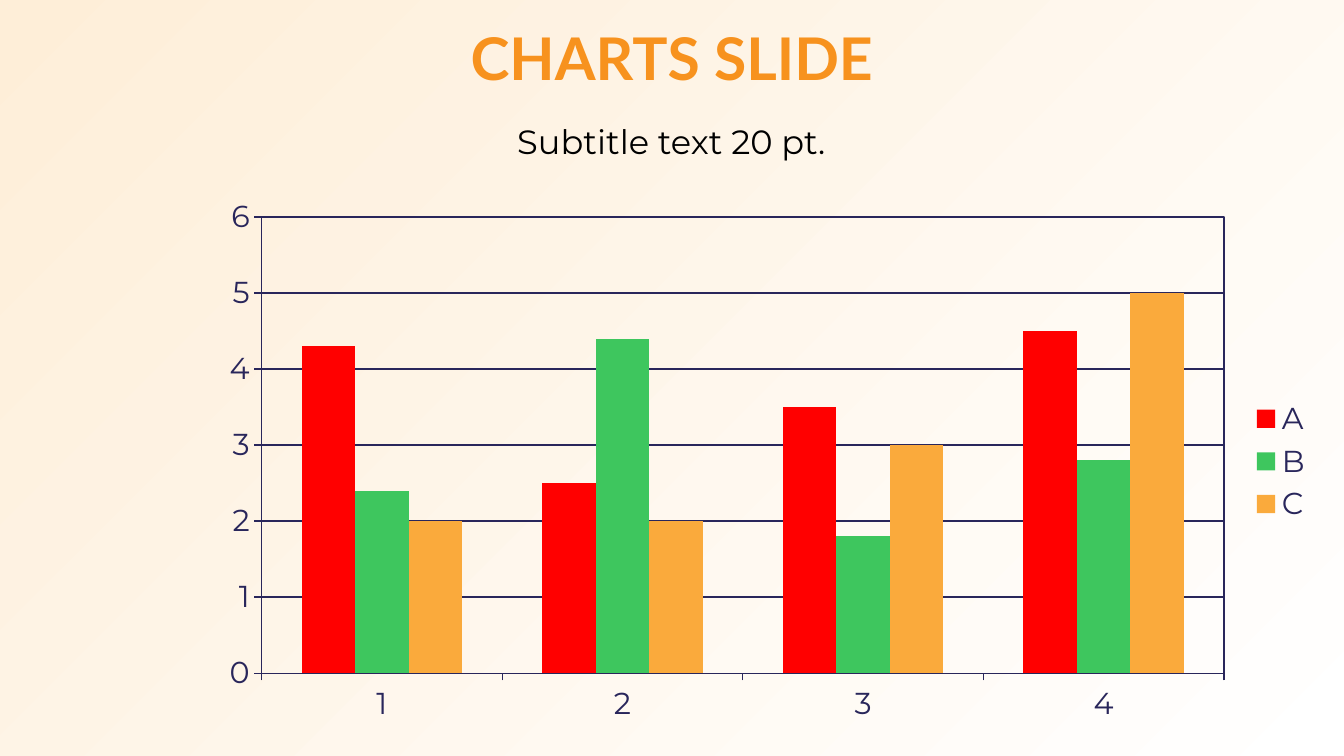
from lxml import etree
from pptx import Presentation
from pptx.chart.data import CategoryChartData
from pptx.dml.color import RGBColor
from pptx.enum import chart as ch, text as tx
from pptx.oxml import parse_xml
from pptx.oxml.ns import nsdecls, qn
from pptx.util import Inches, Pt

NAVY = RGBColor(0x29, 0x26, 0x5B)
BLACK = RGBColor(0, 0, 0)
TITLE_STOPS = RGBColor(0xF7, 0x92, 0x1E), RGBColor(0xF1, 0x49, 0x34)
PAGE_STOPS = RGBColor(0xFF, 0xFF, 0xFF), RGBColor(0xFE, 0xEE, 0xD8)

TITLE = "CHARTS SLIDE"
SUBTITLE = "Subtitle text 20 pt."
CATEGORIES = ["1", "2", "3", "4"]
SERIES = [
    ("A", (4.3, 2.5, 3.5, 4.5), RGBColor(0xFF, 0, 0)),
    ("B", (2.4, 4.4, 1.8, 2.8), RGBColor(0x3E, 0xC6, 0x5E)),
    ("C", (2, 2, 3, 5), RGBColor(0xFA, 0xAA, 0x3C)),
]
PLOT_SHARE = {"x": 0.05, "y": 0.05, "w": 0.86, "h": 0.84}


def set_gradient(fill, colors):
    fill.gradient()
    for stop, position, color in zip(fill.gradient_stops, (0, 1), colors):
        stop.position = position
        stop.color.rgb = color


def paint_background(slide):
    """Radial gradient spreading from the bottom right corner."""
    set_gradient(slide.background.fill, PAGE_STOPS)
    linear = next(slide.element.iter(qn("a:lin")))
    radial = parse_xml(
        f'<a:path {nsdecls("a")} path="circle"><a:fillToRect l="100000" t="100000"/></a:path>')
    linear.getparent().replace(linear, radial)


def fill_placeholder(holder, words, box, size, font_name):
    holder.left, holder.top, holder.width, holder.height = map(Inches, box)
    frame = holder.text_frame
    frame.text = words
    frame.word_wrap = True
    frame.auto_size = tx.MSO_AUTO_SIZE.NONE
    line = frame.paragraphs[0]
    line.alignment = tx.PP_ALIGN.CENTER
    line.line_spacing = 0.9
    line.space_before = Pt(0)
    font = line.runs[0].font
    font.size, font.name = Pt(size), font_name
    return frame, line, font


def style_line(line):
    line.color.rgb = NAVY
    line.width = Pt(0.75)


def frame_plot(chart):
    """Place the inner plot area and give it a navy border."""
    plot_area = chart.element.find(".//" + qn("c:plotArea"))
    for old in plot_area.findall(qn("c:layout")):
        plot_area.remove(old)
    shares = "".join(f'<c:{side} val="{share}"/>' for side, share in PLOT_SHARE.items())
    plot_area.insert(0, parse_xml(
        f'<c:layout {nsdecls("c")}><c:manualLayout><c:layoutTarget val="inner"/>'
        f'<c:xMode val="edge"/><c:yMode val="edge"/>{shares}</c:manualLayout></c:layout>'))
    plot_area.append(parse_xml(
        f'<c:spPr {nsdecls("c", "a")}><a:noFill/><a:ln w="{Pt(0.75)}"><a:solidFill>'
        f'<a:srgbClr val="{NAVY}"/></a:solidFill></a:ln></c:spPr>'))


def add_columns(slide):
    data = CategoryChartData()
    data.categories = CATEGORIES
    for name, values, _ in SERIES:
        data.add_series(name, values)
    chart = slide.shapes.add_chart(
        ch.XL_CHART_TYPE.COLUMN_CLUSTERED,
        Inches(1.7), Inches(1.57), Inches(9.25), Inches(4.49), data).chart
    chart.has_title = False
    chart.font.size, chart.font.name = Pt(18), "Montserrat"
    chart.font.color.rgb = NAVY

    plot = chart.plots[0]
    plot.gap_width, plot.overlap, plot.vary_by_categories = 150, 0, False
    for column, (_, _, color) in zip(plot.series, SERIES):
        column.format.fill.solid()
        column.format.fill.fore_color.rgb = color
        column.invert_if_negative = False

    for axis in (chart.category_axis, chart.value_axis):
        axis.major_tick_mark = ch.XL_TICK_MARK.OUTSIDE
        axis.minor_tick_mark = ch.XL_TICK_MARK.NONE
        axis.tick_labels.font.color.rgb = NAVY
        style_line(axis.format.line)
    scale = chart.value_axis
    scale.minimum_scale, scale.maximum_scale, scale.major_unit = 0, 6, 1
    scale.has_major_gridlines = True
    style_line(scale.major_gridlines.format.line)

    chart.has_legend = True
    chart.legend.position = ch.XL_LEGEND_POSITION.RIGHT
    chart.legend.include_in_layout = False
    chart.legend.font.color.rgb = NAVY
    frame_plot(chart)


def main():
    deck = Presentation()
    deck.slide_width, deck.slide_height = Inches(11.11), Inches(6.25)
    slide = deck.slides.add_slide(deck.slide_layouts[1])
    paint_background(slide)

    frame, _, font = fill_placeholder(
        slide.shapes.title, TITLE, (0, 0.21, 11.11, 0.59), 35, "Lato")
    frame.vertical_anchor = tx.MSO_ANCHOR.MIDDLE
    frame.margin_left = frame.margin_right = Inches(0.05)
    font.bold = True
    set_gradient(font.fill, TITLE_STOPS)
    font.fill.gradient_angle = 315

    _, line, font = fill_placeholder(
        slide.placeholders[1], SUBTITLE, (0.3, 0.99, 10.5, 0.4), 20, "Montserrat")
    font.color.rgb = BLACK
    properties = line._p.get_or_add_pPr()
    properties.set("marL", "0")
    properties.set("indent", "0")
    etree.SubElement(properties, qn("a:buNone"))

    add_columns(slide)
    deck.save("out.pptx")


if __name__ == "__main__":
    main()
